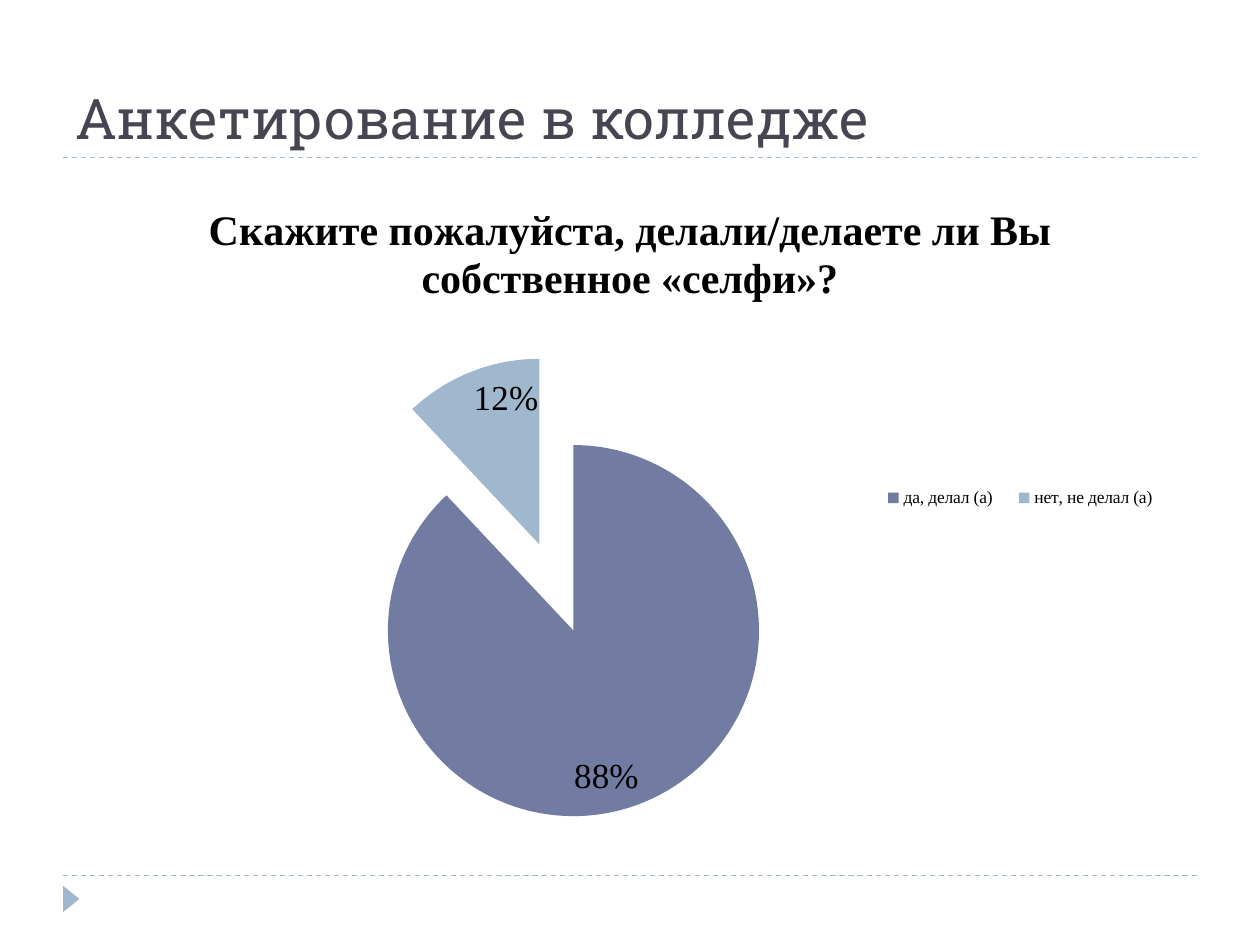
"""Build the survey slide with a pie chart of selfie answers."""
from lxml import etree
from pptx import Presentation
from pptx.chart.data import CategoryChartData
from pptx.dml.color import RGBColor
from pptx.enum.chart import XL_CHART_TYPE, XL_LABEL_POSITION, XL_LEGEND_POSITION
from pptx.enum.dml import MSO_LINE
from pptx.enum.shapes import MSO_CONNECTOR, MSO_SHAPE
from pptx.enum.text import MSO_ANCHOR, PP_ALIGN
from pptx.oxml.ns import qn
from pptx.util import Pt

PIE = XL_CHART_TYPE.PIE
INSIDE_END = XL_LABEL_POSITION.INSIDE_END
RIGHT = XL_LEGEND_POSITION.RIGHT
DASH = MSO_LINE.DASH
STRAIGHT = MSO_CONNECTOR.STRAIGHT
TRIANGLE = MSO_SHAPE.ISOSCELES_TRIANGLE
BOTTOM = MSO_ANCHOR.BOTTOM
LEFT = PP_ALIGN.LEFT

BLACK = RGBColor(0, 0, 0)
SLATE = RGBColor(0x46, 0x46, 0x53)
INDIGO = RGBColor(0x72, 0x7C, 0xA3)
PALE_BLUE = RGBColor(0x9F, 0xB8, 0xCD)
SERIF = "Times New Roman"


def style_font(font, name, size, color, bold=False):
    font.name = name
    font.size = Pt(size)
    font.color.rgb = color
    font.bold = bold


def make_layout(left, top, width, height, inner=False):
    layout = etree.Element(qn("c:layout"))
    manual = etree.SubElement(layout, qn("c:manualLayout"))
    settings = [("layoutTarget", "inner")] if inner else []
    settings += [("xMode", "edge"), ("yMode", "edge"),
                 ("x", left), ("y", top), ("w", width), ("h", height)]
    for tag, value in settings:
        etree.SubElement(manual, qn(f"c:{tag}"), val=str(value))
    return layout


deck = Presentation()
deck.slide_width = Pt(720)
deck.slide_height = Pt(540)
page = deck.slides.add_slide(deck.slide_layouts[5])

for height in (500.4, 90):
    rule = page.shapes.add_connector(STRAIGHT, Pt(36), Pt(height), Pt(684), Pt(height))
    rule.line.color.rgb = PALE_BLUE
    rule.line.width = Pt(0.75)
    rule.line.dash_style = DASH
    etree.SubElement(rule._element.spPr, qn("a:effectLst"))

marker = page.shapes.add_shape(TRIANGLE, Pt(33.12), Pt(509.04), Pt(15.12), Pt(9.36))
marker.rotation = 90
marker.shadow.inherit = False
marker.fill.solid()
marker.fill.fore_color.rgb = PALE_BLUE
marker.line.fill.background()

title = page.shapes.title
title.left, title.top, title.width, title.height = Pt(36), Pt(12.24), Pt(648), Pt(77.76)
title.text_frame.vertical_anchor = BOTTOM
para = title.text_frame.paragraphs[0]
para.alignment = LEFT
span = para.add_run()
span.text = "Анкетирование в колледже"
style_font(span.font, "Roboto Slab", 32, SLATE)

answers = CategoryChartData(number_format="0")
answers.categories = ["да, делал (а)", "нет, не делал (а)"]
answers.add_series("Series 1", [88, 12])
chart = page.shapes.add_chart(
    PIE, Pt(36.72), Pt(100.08), Pt(646.56), Pt(380.16), answers).chart
style_font(chart.font, "Calibri", 10, BLACK)

chart.has_title = True
question = chart.chart_title.text_frame.paragraphs[0].add_run()
question.text = "Скажите пожалуйста, делали/делаете ли Вы собственное «селфи»?"
style_font(question.font, SERIF, 24, BLACK, bold=True)
chart.chart_title.include_in_layout = False

chart.has_legend = True
chart.legend.position = RIGHT
chart.legend.include_in_layout = False
style_font(chart.legend.font, SERIF, 10, BLACK)
legend_position = chart.legend._element.find(qn("c:legendPos"))
legend_position.addnext(make_layout(0.71, 0.46, 0.27, 0.05))

plot = chart.plots[0]
plot.vary_by_categories = True
plot_area = plot._element.getparent()
for old_layout in plot_area.findall(qn("c:layout")):
    plot_area.remove(old_layout)
plot_area.insert(0, make_layout(0.23, 0.27, 0.41, 0.7, inner=True))

series = plot.series[0]
for index, color in enumerate((INDIGO, PALE_BLUE)):
    fill = series.points[index].format.fill
    fill.solid()
    fill.fore_color.rgb = color
explosion = etree.Element(qn("c:explosion"), val="25")
series._element.find(qn("c:dPt")).addprevious(explosion)

labels = series.data_labels
labels.show_value = False
labels.show_percentage = True
labels.number_format = "0%"
labels.number_format_is_linked = False
labels.position = INSIDE_END
style_font(labels.font, SERIF, 20, BLACK)

deck.save("out.pptx")
